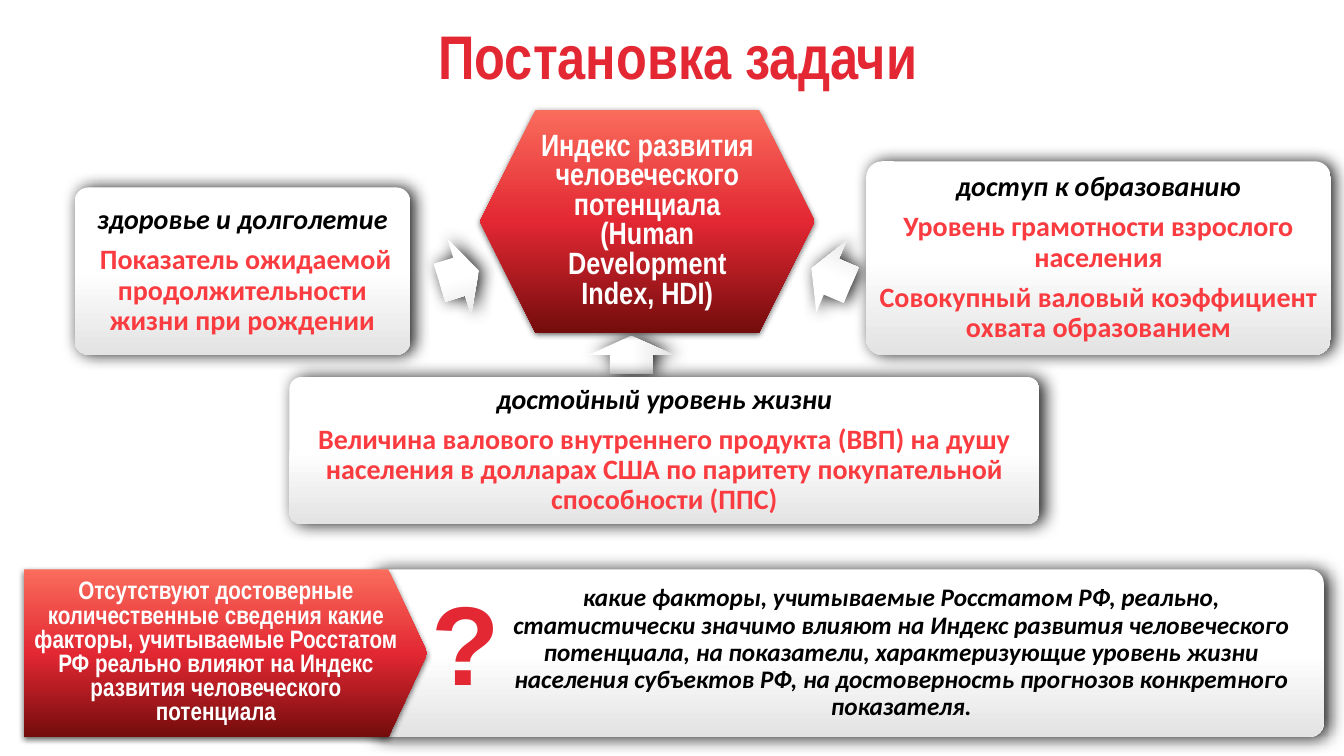
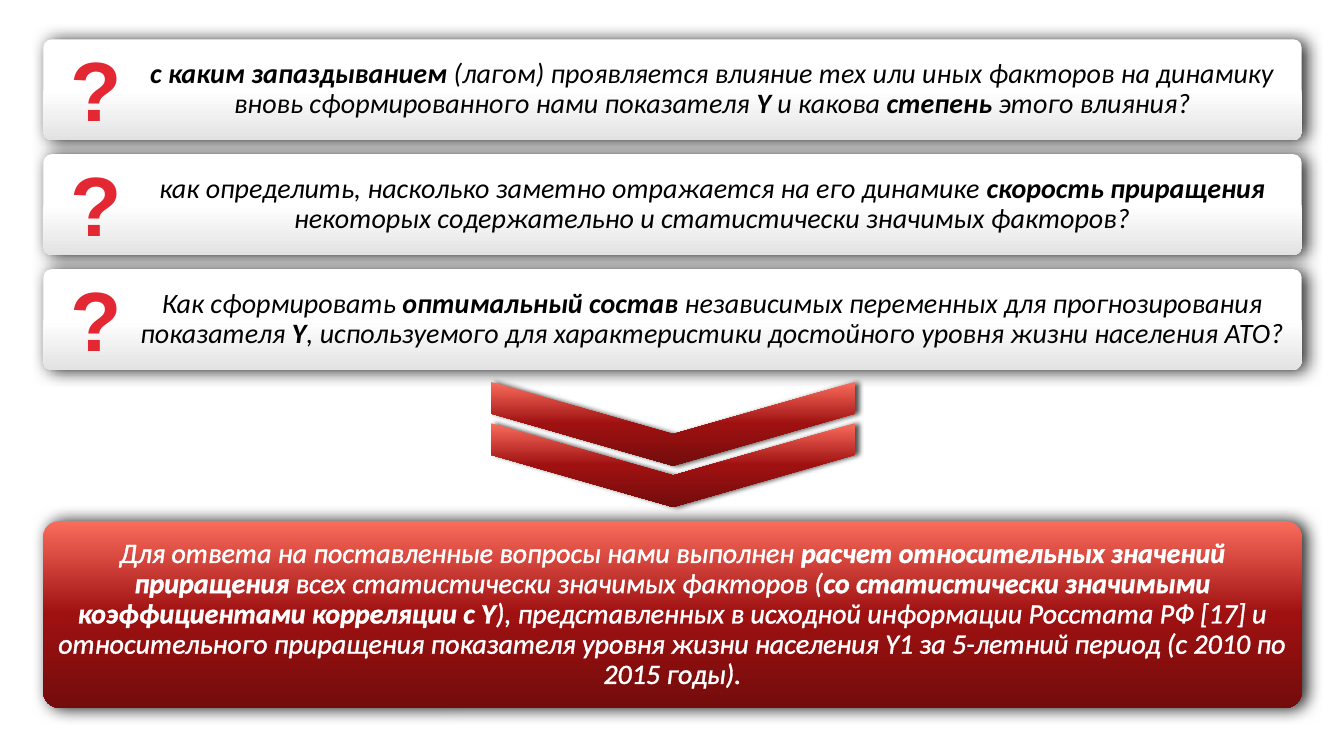
from dataclasses import dataclass

from lxml import etree
from pptx import Presentation
from pptx import util as u
from pptx.dml import color
from pptx.enum import shapes, text
from pptx.oxml import ns


@dataclass(frozen=True)
class Theme:
    red: str = "E32833"
    dark_red: str = "740C0C"
    accent: str = "FA3B40"
    black: str = "000000"
    white: str = "FFFFFF"
    # gradient stops at 0, 50 and 100 %
    pale_fill: tuple = ("FFFFFF", "FFFFFF", "E3E3E3")
    red_fill: tuple = ("FA6C5C", "E32833", "740C0C")
    deep_fill: tuple = ("FA6C5C", "9F1111", "740C0C")
    # shadow: opacity %, blur pt, distance pt, angle
    card_shadow: tuple = (87, 12, 3, 0)
    badge_shadow: tuple = (63, 4.5, 1.5, 90)
    chevron_shadow: tuple = (70, 4, 3, 0)
    head_font: str = "Arial Narrow"
    body_font: str = "Calibri"
    mark_font: str = "Arial"
    title_size: int = 44
    badge_size: int = 22
    body_size: int = 20
    small_size: int = 18
    paragraph_gap: int = 7
    corner: float = 0.083
    card_inset: float = 0.08


THEME = Theme()
SHAPE = shapes.MSO_SHAPE


# --- Formatting ---
def add_xml(parent, tag, **attributes):
    return etree.SubElement(parent, ns.qn(tag),
                            {key: str(value) for key, value in attributes.items()})


def paint(shape, stops, shadow, angle=90):
    """Three-stop gradient, no outline, outer shadow."""
    shape.fill.background()
    shape.line.fill.background()
    shape.shadow.inherit = False
    properties = shape._element.spPr

    gradient = etree.Element(ns.qn("a:gradFill"), rotWithShape="1")
    stop_list = add_xml(gradient, "a:gsLst")
    for index, stop in enumerate(stops):
        add_xml(add_xml(stop_list, "a:gs", pos=index * 50000), "a:srgbClr", val=stop)
    add_xml(gradient, "a:lin", ang=angle * 60000, scaled=0)
    properties.replace(properties.find(ns.qn("a:noFill")), gradient)

    opacity, blur, distance, direction = shadow
    outer = add_xml(properties.find(ns.qn("a:effectLst")), "a:outerShdw",
                    blurRad=u.Pt(blur), dist=u.Pt(distance),
                    dir=direction * 60000, rotWithShape=0)
    tint = add_xml(outer, "a:srgbClr", val=THEME.black)
    add_xml(tint, "a:alpha", val=opacity * 1000)


def outline_text(paragraph, ink, width):
    line = etree.Element(ns.qn("a:ln"), w=str(u.Pt(width)))
    add_xml(add_xml(line, "a:solidFill"), "a:srgbClr", val=ink)
    paragraph._p.pPr.find(ns.qn("a:defRPr")).insert(0, line)


def write(paragraph, words, font, size, ink, bold=None, italic=False,
          spacing=None, outline=None):
    """Centred paragraph; with bold=None, parts between asterisks are bold."""
    paragraph.alignment = text.PP_ALIGN.CENTER
    if spacing:
        paragraph.line_spacing = spacing
    style = paragraph.font
    style.name, style.size = font, u.Pt(size)
    style.color.rgb = color.RGBColor.from_string(ink)
    style.italic = italic
    if bold is not None:
        style.bold = bold
    if outline:
        outline_text(paragraph, *outline)
    parts = words.split("*") if bold is None else [words]
    for index, part in enumerate(parts):
        if part:
            run = paragraph.add_run()
            run.text = part
            if bold is None:
                run.font.bold = index % 2 == 1


def paragraphs(frame, count):
    return [frame.paragraphs[0]] + [frame.add_paragraph() for _ in range(count - 1)]


# --- Kinds of element ---
def add_figure(slide, kind, box, stops, shadow, angle=90, rotation=0, adjust=None):
    figure = slide.shapes.add_shape(kind, *map(u.Inches, box))
    if adjust is not None:
        figure.adjustments[0] = adjust
    figure.rotation = rotation
    paint(figure, stops, shadow, angle)
    return figure


def add_card(slide, box, lines, stops=THEME.pale_fill, left_inset=THEME.card_inset):
    """Rounded card; each line is (words, text style)."""
    card = add_figure(slide, SHAPE.ROUNDED_RECTANGLE, box, stops,
                      THEME.card_shadow, adjust=THEME.corner)
    frame = card.text_frame
    frame.word_wrap = True
    frame.vertical_anchor = text.MSO_ANCHOR.MIDDLE
    frame.margin_top = frame.margin_right = frame.margin_bottom = u.Inches(THEME.card_inset)
    frame.margin_left = u.Inches(left_inset)
    for paragraph, (words, style) in zip(paragraphs(frame, len(lines)), lines):
        paragraph.space_after = u.Pt(THEME.paragraph_gap)
        settings = {"size": THEME.body_size, "ink": THEME.black, **style}
        write(paragraph, words, THEME.body_font, spacing=0.9, **settings)


def add_component(slide, box, heading, *indicators):
    """Index component: black heading over its red indicators."""
    heading_style = {"bold": True, "italic": True}
    indicator_style = {"bold": True, "ink": THEME.accent,
                       "outline": (THEME.dark_red, 0.75)}
    add_card(slide, box, [(heading, heading_style)]
             + [(words, indicator_style) for words in indicators])


def add_badge(slide, kind, box, lines, size, adjust=None):
    badge = add_figure(slide, kind, box, THEME.red_fill, THEME.badge_shadow, adjust=adjust)
    frame = badge.text_frame
    frame.word_wrap = True
    frame.vertical_anchor = text.MSO_ANCHOR.MIDDLE
    for paragraph, words in zip(paragraphs(frame, len(lines)), lines):
        write(paragraph, words, THEME.head_font, size, THEME.white, bold=True, spacing=0.8)


def add_label(slide, box, words, font, size, wrap, spacing=None):
    """Red outlined text: title or question mark."""
    frame = slide.shapes.add_textbox(*map(u.Inches, box)).text_frame
    frame.word_wrap = wrap
    if wrap:
        frame.vertical_anchor = text.MSO_ANCHOR.MIDDLE
    else:
        frame.auto_size = text.MSO_AUTO_SIZE.SHAPE_TO_FIT_TEXT
    write(frame.paragraphs[0], words, font, size, THEME.red, bold=True,
          spacing=spacing, outline=(THEME.dark_red, 0.52))


def add_question_mark(slide, box, size):
    add_label(slide, box, "?", THEME.mark_font, size, wrap=False)


# --- Slides ---
def build_task_slide(slide):
    # Arrows towards the index
    for box, rotation in (((4.35, 2.35, 0.41, 0.79), 342.7),
                          ((8.03, 2.36, 0.43, 0.77), 202.9),
                          ((6.07, 3.1, 0.38, 0.84), 270)):
        add_figure(slide, SHAPE.RIGHT_ARROW, box, THEME.pale_fill,
                   THEME.card_shadow, rotation=rotation)

    add_label(slide, (0.24, 0.15, 12.97, 0.93), "Постановка задачи",
              THEME.head_font, THEME.title_size, wrap=True, spacing=0.8)

    # Index and its three components
    add_badge(slide, SHAPE.HEXAGON, (4.76, 1.09, 3.32, 2.21),
              ["Индекс развития человеческого потенциала",
               "(Human Development Index, HDI)"], THEME.badge_size)
    add_component(slide, (0.74, 1.86, 3.33, 1.66), "здоровье и долголетие",
                  " Показатель ожидаемой продолжительности жизни при рождении")
    add_component(slide, (8.59, 1.6, 4.61, 1.92), "доступ к образованию",
                  "Уровень грамотности взрослого населения",
                  "Совокупный валовый коэффициент охвата образованием")
    add_component(slide, (2.87, 3.74, 7.44, 1.46), "достойный уровень жизни",
                  "Величина валового внутреннего продукта (ВВП) на душу населения "
                  "в долларах США по паритету покупательной способности (ППС)")

    # Problem and question
    add_card(slide, (3.65, 5.65, 9.48, 1.66),
             [("какие факторы, учитываемые Росстатом РФ, реально, статистически значимо "
               "влияют на Индекс развития человеческого потенциала, на показатели, "
               "характеризующие уровень жизни населения субъектов РФ, на достоверность "
               "прогнозов конкретного показателя.",
               {"size": THEME.small_size, "bold": True, "italic": True})],
             left_inset=1.18)
    add_badge(slide, SHAPE.PENTAGON, (0.24, 5.65, 4, 1.66),
              ["Отсутствуют достоверные количественные сведения какие факторы, "
               "учитываемые Росстатом РФ реально влияют на Индекс развития "
               "человеческого потенциала"], THEME.small_size, adjust=0.234)
    add_question_mark(slide, (4.17, 5.64, 0.89, 1.45), 80)


def build_questions_slide(slide):
    left, width = 0.43, 12.48

    # Questions
    questions = (
        "*с каким запаздыванием* (лагом) проявляется влияние тех или иных факторов "
        "на динамику вновь сформированного нами показателя *Y* и какова *степень* "
        "этого влияния?",
        "как определить, насколько заметно отражается на его динамике *скорость "
        "приращения* некоторых содержательно и статистически значимых факторов?",
        "Как сформировать *оптимальный состав* независимых переменных для "
        "прогнозирования показателя *Y*, используемого для характеристики достойного "
        "уровня жизни населения АТО?",
    )
    for row, question in enumerate(questions):
        top = 0.39 + row * 1.14
        add_card(slide, (left, top, width, 1), [(question, {"italic": True})],
                 left_inset=0.87)
        add_question_mark(slide, (0.56, top - 0.07, 0.78, 0.99), 60)

    # Chevrons down to the answer
    for top in (2.4, 2.81):
        add_figure(slide, SHAPE.CHEVRON, (6.26, top, 0.83, 3.61), THEME.deep_fill,
                   THEME.chevron_shadow, angle=0, rotation=90, adjust=0.623)

    # Answer
    add_card(slide, (left, 5.17, width, 1.85),
             [("Для ответа на поставленные вопросы нами выполнен *расчет относительных "
               "значений приращения* всех статистически значимых факторов (*со "
               "статистически значимыми коэффициентами корреляции с Y*), представленных "
               "в исходной информации Росстата РФ [17] и относительного приращения "
               "показателя уровня жизни населения Y1 за 5-летний период "
               "(с 2010 по 2015 годы).",
               {"ink": THEME.white, "italic": True, "outline": (THEME.white, 0.75)})],
             stops=THEME.deep_fill)


def main():
    deck = Presentation()
    deck.slide_width, deck.slide_height = u.Inches(13.33), u.Inches(7.5)
    for build in (build_task_slide, build_questions_slide):
        build(deck.slides.add_slide(deck.slide_layouts[6]))
    deck.save("out.pptx")


if __name__ == "__main__":
    main()
